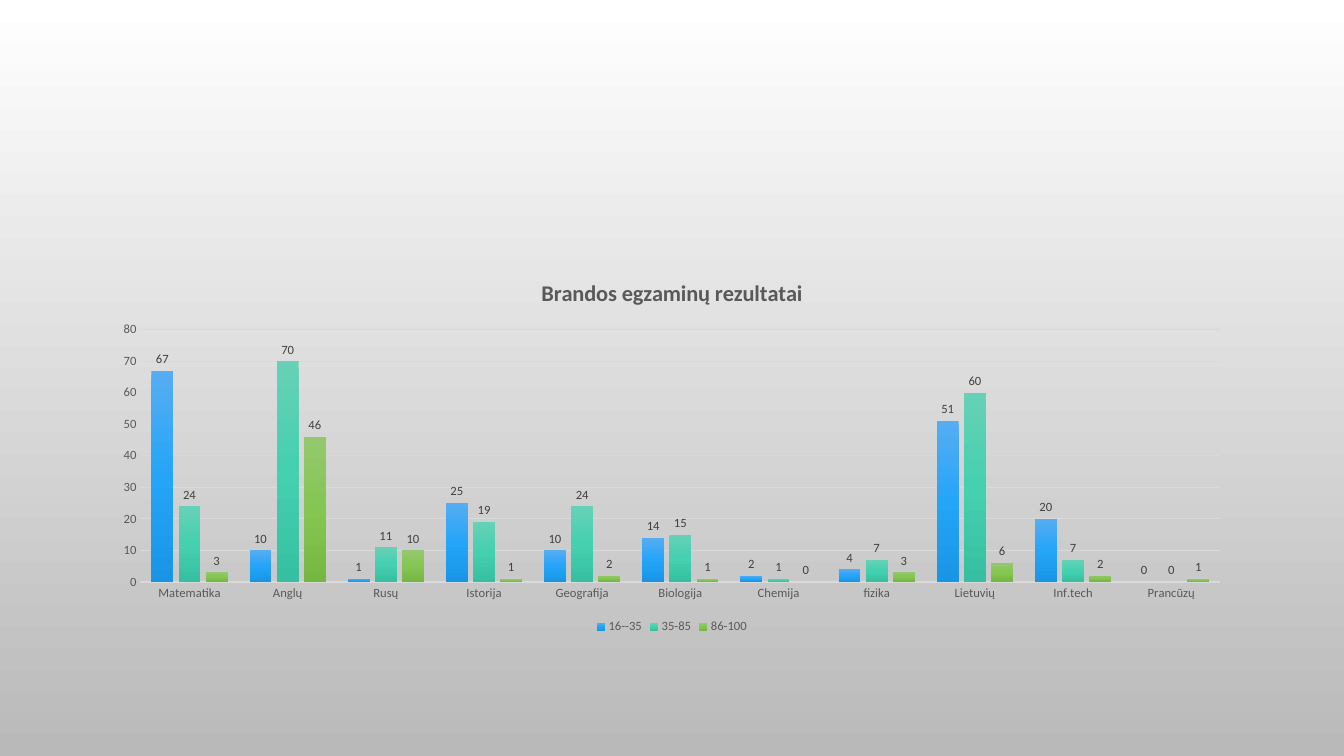
"""Build a slide with a column chart of school-leaving exam results."""
from dataclasses import dataclass

from lxml import etree
from pptx import Presentation
from pptx import util as u
from pptx.chart.data import CategoryChartData
from pptx.dml.color import RGBColor
from pptx.dml.fill import FillFormat
from pptx.enum import chart as ch
from pptx.oxml import ns
from pptx.text.text import Font

FACE = "Calibri"
BLACK = RGBColor(0x00, 0x00, 0x00)
DARK = RGBColor(0x40, 0x40, 0x40)
GRAY = RGBColor(0x59, 0x59, 0x59)
PALE = RGBColor(0xD9, 0xD9, 0xD9)
SILVER = RGBColor(0xB9, 0xB9, 0xB9)
WHITE = RGBColor(0xFF, 0xFF, 0xFF)
BLUES = (RGBColor(0x56, 0xAD, 0xF2), RGBColor(0x25, 0xA5, 0xF8), RGBColor(0x18, 0x95, 0xE5))
TEALS = (RGBColor(0x66, 0xD1, 0xB6), RGBColor(0x45, 0xD0, 0xB0), RGBColor(0x36, 0xC0, 0xA1))
GREENS = (RGBColor(0x94, 0xC8, 0x6E), RGBColor(0x85, 0xC6, 0x52), RGBColor(0x76, 0xB6, 0x43))


@dataclass
class Band:
    """A range of marks with its counts and column shades."""
    name: str
    counts: tuple[int, ...]
    shades: tuple[RGBColor, ...]


SUBJECTS = ("Matematika", "Anglų", "Rusų", "Istorija", "Geografija", "Biologija",
            "Chemija", "fizika", "Lietuvių", "Inf.tech", "Prancūzų")
BANDS = (
    Band("16--35", (67, 10, 1, 25, 10, 14, 2, 4, 51, 20, 0), BLUES),
    Band("35-85", (24, 70, 11, 19, 24, 15, 1, 7, 60, 7, 0), TEALS),
    Band("86-100", (3, 46, 10, 1, 2, 1, 0, 3, 6, 2, 1), GREENS),
)


def shade(fill: FillFormat, root: etree._Element, shades: tuple[RGBColor, ...]) -> None:
    """Fill from top to bottom with evenly spaced shades."""
    fill.gradient()
    fill.gradient_angle = 270
    stops = root.find(".//" + ns.qn("a:gsLst"))
    for stop in list(stops):
        stops.remove(stop)
    for i, tone in enumerate(shades):
        place = str(100000 * i // (len(shades) - 1))
        stop = etree.SubElement(stops, ns.qn("a:gs"), pos=place)
        etree.SubElement(stop, ns.qn("a:srgbClr"), val=str(tone))


def style(font: Font, size: float, tone: RGBColor, bold: bool = False) -> None:
    """Set the face, size, colour and weight of a font."""
    font.name, font.size, font.bold = FACE, u.Pt(size), bold
    font.color.rgb = tone


def main() -> None:
    """Draw the slide and save it."""
    deck = Presentation()
    deck.slide_width, deck.slide_height = u.Inches(13.33), u.Inches(7.5)
    slide = deck.slides.add_slide(deck.slide_layouts[6])
    shade(slide.background.fill, slide.element, (WHITE, SILVER))

    data = CategoryChartData(number_format="General")
    data.categories = SUBJECTS
    for band in BANDS:
        data.add_series(band.name, band.counts)
    chart = slide.shapes.add_chart(
        ch.XL_CHART_TYPE.COLUMN_CLUSTERED, u.Inches(1), u.Inches(2.59),
        u.Inches(11.33), u.Inches(3.74), data).chart
    style(chart.font, 10, BLACK)

    chart.has_title = True
    chart.chart_title.include_in_layout = False
    title = chart.chart_title.text_frame
    title.text = "Brandos egzaminų rezultatai"
    style(title.paragraphs[0].font, 16, GRAY, bold=True)

    chart.has_legend = True
    chart.legend.position = ch.XL_LEGEND_POSITION.BOTTOM
    chart.legend.include_in_layout = False
    style(chart.legend.font, 9, GRAY)

    for axis in (chart.category_axis, chart.value_axis):
        axis.major_tick_mark = axis.minor_tick_mark = ch.XL_TICK_MARK.NONE
        style(axis.tick_labels.font, 9, GRAY)
    base = chart.category_axis.format.line
    base.color.rgb, base.width = PALE, u.Pt(1)
    scale = chart.value_axis
    scale.minimum_scale, scale.maximum_scale, scale.major_unit = 0, 80, 10
    scale.format.line.fill.background()
    grid = scale.major_gridlines.format.line
    grid.color.rgb, grid.width = PALE, u.Pt(0.75)

    plot = chart.plots[0]
    plot.gap_width, plot.overlap, plot.vary_by_categories = 100, -24, False
    plot.has_data_labels = True
    plot.data_labels.show_value = True
    plot.data_labels.position = ch.XL_LABEL_POSITION.OUTSIDE_END
    style(plot.data_labels.font, 9, DARK)
    for series, band in zip(plot.series, BANDS):
        series.invert_if_negative = False
        shade(series.format.fill, series._element, band.shades)

    deck.save("out.pptx")


if __name__ == "__main__":
    main()
